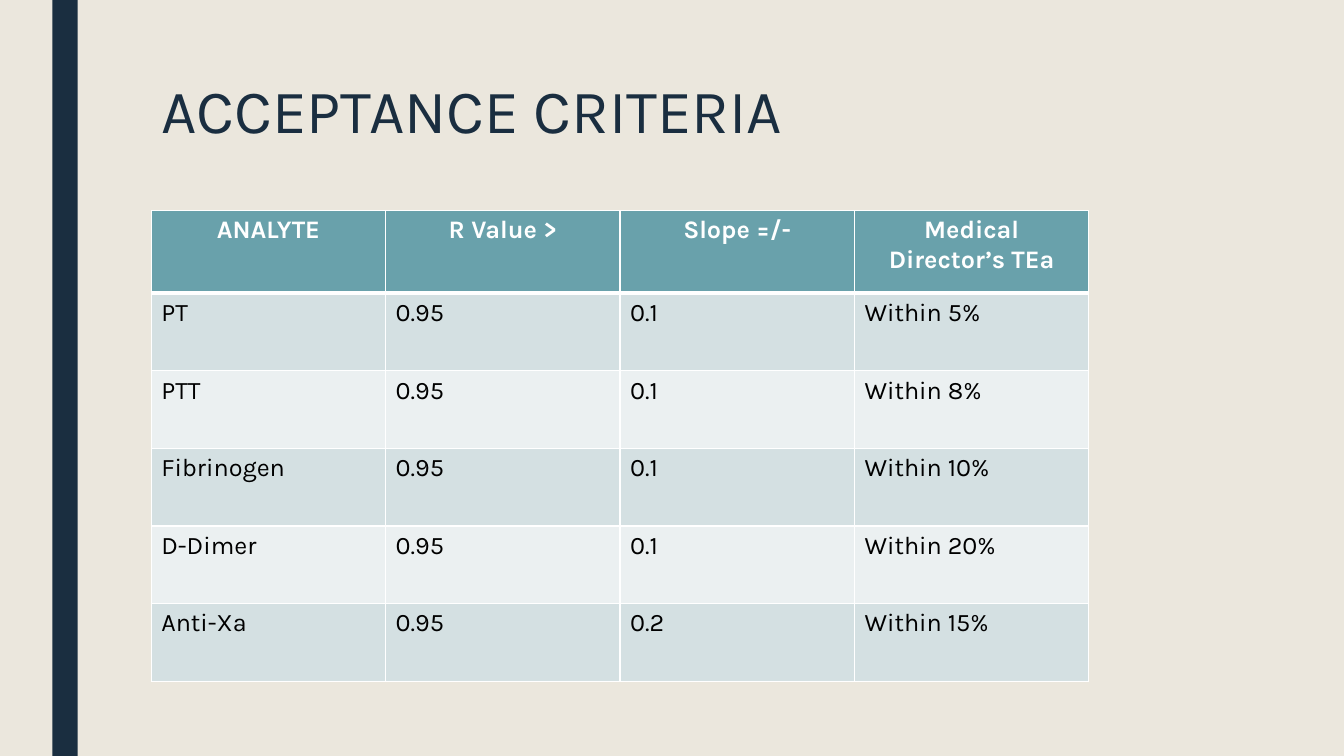
from dataclasses import dataclass

from lxml import etree
from pptx import Presentation
from pptx.dml.color import RGBColor
from pptx.enum.shapes import MSO_SHAPE
from pptx.enum.text import MSO_ANCHOR, PP_ALIGN
from pptx.oxml.ns import qn
from pptx.util import Inches, Pt

RECTANGLE = MSO_SHAPE.RECTANGLE
TOP = MSO_ANCHOR.TOP
LEFT, CENTER = PP_ALIGN.LEFT, PP_ALIGN.CENTER

TITLE = "ACCEPTANCE CRITERIA"
HEADINGS = ("ANALYTE", "R Value >", "Slope =/-", "Medical Director’s TEa")
CRITERIA = [
    ("PT", "0.95", "0.1", "Within 5%"),
    ("PTT", "0.95", "0.1", "Within 8%"),
    ("Fibrinogen", "0.95", "0.1", "Within 10%"),
    ("D-Dimer", "0.95", "0.1", "Within 20%"),
    ("Anti-Xa", "0.95", "0.2", "Within 15%"),
]


@dataclass(frozen=True)
class Theme:
    font: str = "Karla"
    paper: str = "EBE7DD"
    navy: str = "1A2E40"
    teal: str = "69A1AB"
    bands: tuple = ("D4E0E2", "EBF0F1")
    rule: str = "FFFFFF"
    ink: str = "000000"
    title_size: int = 44
    table_size: int = 18
    thin: int = 1
    thick: int = 3


THEME = Theme()
WIDTH, HEIGHT = Inches(13.33), Inches(7.5)
MARGIN = Inches(1.5)
STRIPE_LEFT, STRIPE_WIDTH = Inches(0.52), Inches(0.25)
TITLE_TOP, TITLE_WIDTH, TITLE_HEIGHT = HEIGHT // 10, Inches(10.5), Inches(1.62)
TABLE_TOP, TABLE_WIDTH = Inches(2.09), Inches(9.3)
HEADING_HEIGHT, ROW_HEIGHT = Inches(0.82), Inches(0.77)


def paint(fill, color):
    fill.solid()
    fill.fore_color.rgb = RGBColor.from_string(color)


def write(frame, text, color, size, bold=False, align=LEFT):
    frame.word_wrap = True
    paragraph = frame.paragraphs[0]
    paragraph.alignment = align
    run = paragraph.add_run()
    run.text = text
    styles = {"name": THEME.font, "size": Pt(size), "bold": bold}
    for key, value in styles.items():
        setattr(run.font, key, value)
    run.font.color.rgb = RGBColor.from_string(color)
    return paragraph


def add_borders(cell, widths):
    properties = cell._tc.get_or_add_tcPr()
    for side, width in widths.items():
        border = etree.SubElement(properties, qn(f"a:ln{side}"), w=str(Pt(width)))
        solid = etree.SubElement(border, qn("a:solidFill"))
        etree.SubElement(solid, qn("a:srgbClr"), val=THEME.rule)


def add_stripe(slide):
    stripe = slide.shapes.add_shape(RECTANGLE, STRIPE_LEFT, 0, STRIPE_WIDTH, HEIGHT)
    stripe.shadow.inherit = False
    paint(stripe.fill, THEME.navy)
    stripe.line.fill.background()


def add_title(slide):
    frame = slide.shapes.add_textbox(
        MARGIN, TITLE_TOP, TITLE_WIDTH, TITLE_HEIGHT).text_frame
    frame.vertical_anchor = TOP
    heading = write(frame, TITLE, THEME.navy, THEME.title_size)
    heading.line_spacing = 0.89


def add_criteria(slide):
    rows = [HEADINGS, *CRITERIA]
    heights = [HEADING_HEIGHT] + [ROW_HEIGHT] * len(CRITERIA)
    table = slide.shapes.add_table(
        len(rows), len(HEADINGS), MARGIN, TABLE_TOP, TABLE_WIDTH, sum(heights)).table
    for column in table.columns:
        column.width = TABLE_WIDTH // len(HEADINGS)
    for r, (values, height) in enumerate(zip(rows, heights)):
        table.rows[r].height = height
        header = r == 0
        fill = THEME.teal if header else THEME.bands[(r - 1) % 2]
        color = THEME.rule if header else THEME.ink
        widths = {
            "L": THEME.thin,
            "R": THEME.thin,
            "T": THEME.thick if r == 1 else THEME.thin,
            "B": THEME.thick if header else THEME.thin,
        }
        for c, value in enumerate(values):
            cell = table.cell(r, c)
            add_borders(cell, widths)
            paint(cell.fill, fill)
            write(cell.text_frame, value, color, THEME.table_size,
                  header, CENTER if header else LEFT)


def main():
    deck = Presentation()
    deck.slide_width, deck.slide_height = WIDTH, HEIGHT
    slide = deck.slides.add_slide(deck.slide_layouts[6])
    paint(slide.background.fill, THEME.paper)
    add_stripe(slide)
    add_title(slide)
    add_criteria(slide)
    deck.save("out.pptx")


if __name__ == "__main__":
    main()
